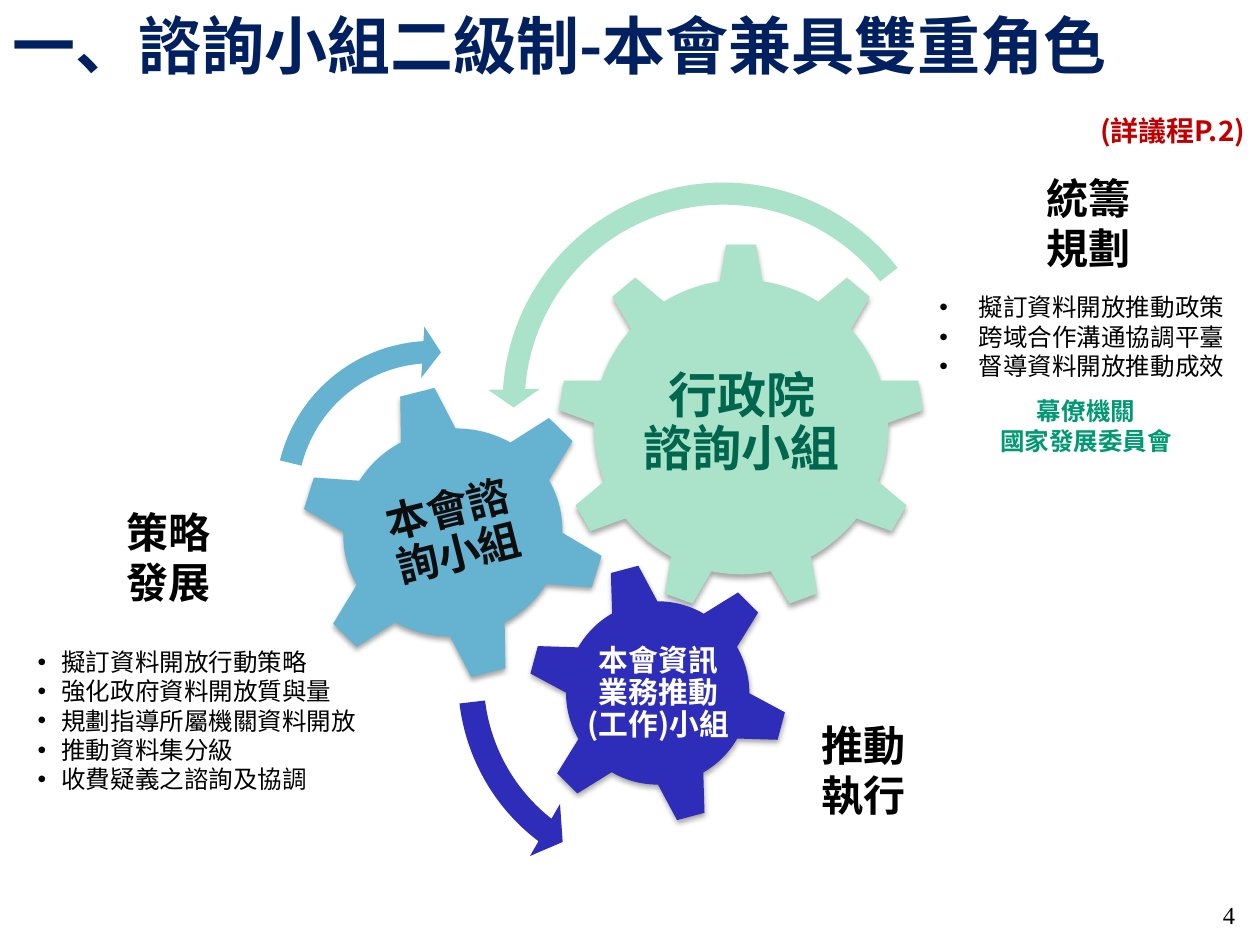
from dataclasses import dataclass
from lxml.etree import SubElement as Sub
from pptx import Presentation as Deck
from pptx.dml.color import RGBColor as Rgb
from pptx.enum.shapes import MSO_SHAPE as Geo
from pptx.enum.text import MSO_ANCHOR as Anc, PP_ALIGN as Al
from pptx.oxml.ns import qn
from pptx.util import Cm, Pt


@dataclass(frozen=True)
class Theme:
    sans: str = "Noto Sans CJK SC"
    serif: str = "Times New Roman"
    black: str = "000000"
    white: str = "FFFFFF"
    ink: str = "0D0D0D"
    navy: str = "002060"
    red: str = "C00000"
    mint: str = "AAE2CA"
    pine: str = "00664D"
    green: str = "009973"
    sky: str = "66B3D1"
    blue: str = "2D2DB9"
    title: int = 36
    large: int = 28
    head: int = 24
    small: int = 17
    note: int = 16
    body: int = 14


def write(frame, text, size, color, font, bold=False, align=Al.LEFT,
          gap=None, hang=0):
    for num, line in enumerate(text.split("\n")):
        para = frame.paragraphs[0] if num == 0 else frame.add_paragraph()
        para.alignment = align
        if gap:
            para.line_spacing = gap
        if hang:
            props = para._p.get_or_add_pPr()
            props.set("marL", str(Cm(hang)))
            props.set("indent", str(-Cm(hang)))
            Sub(props, qn("a:buFont"), typeface="Arial")
            Sub(props, qn("a:buChar"), char="•")
        para.text = line
        for run in para.runs:
            run.font.name = font
            run.font.size = Pt(size)
            run.font.bold = bold
            run.font.color.rgb = Rgb.from_string(color)
            Sub(run._r.get_or_add_rPr(), qn("a:ea"), typeface=font)


class Board:
    def __init__(self, theme, slide):
        self.theme = theme
        self.slide = slide

    def text(self, box, text, size, color, font=None, anchor=Anc.TOP,
             inset=None, turn=0, **form):
        item = self.slide.shapes.add_textbox(*map(Cm, box))
        item.rotation = turn
        frame = item.text_frame
        frame.word_wrap = True
        frame.vertical_anchor = anchor
        if inset is not None:
            frame.margin_left = frame.margin_right = Cm(inset)
            frame.margin_top = frame.margin_bottom = Cm(inset)
        write(frame, text, size, color, font or self.theme.sans, **form)

    def shape(self, kind, box, color, turn=0):
        item = self.slide.shapes.add_shape(kind, *map(Cm, box))
        item.rotation = turn
        item.fill.solid()
        item.fill.fore_color.rgb = Rgb.from_string(color)
        item.line.fill.background()
        item.shadow.inherit = False
        return item

    def gear(self, kind, box, color, turn=0):
        item = self.shape(kind, box, color, turn)
        glow = item._element.spPr.find(qn("a:effectLst"))
        shade = Sub(glow, qn("a:outerShdw"), blurRad=str(Pt(3.1)),
                    dist=str(Pt(1.8)), dir="5400000", rotWithShape="0")
        tone = Sub(shade, qn("a:srgbClr"), val=self.theme.black)
        Sub(tone, qn("a:alpha"), val="35000")

    def label(self, box, text, size, color, inset, turn=0):
        self.text(box, text, size, color, anchor=Anc.MIDDLE, inset=inset,
                  turn=turn, bold=True, align=Al.CENTER, gap=0.9)

    def arc(self, kind, box, color, turn, flip, width, angles, tip):
        item = self.shape(kind, box, color, turn)
        item._element.spPr.find(qn("a:xfrm")).set(flip, "1")
        vals = [width / 100, *(deg * 0.6 for deg in angles), tip / 100]
        for num, val in enumerate(vals):
            item.adjustments[num] = val

    def head(self, left, top, text):
        self.text((left, top, 2.57, 2.31), text, self.theme.head,
                  self.theme.black, bold=True)

    def list(self, box, text, hang):
        self.text(box, text, self.theme.body, self.theme.black,
                  anchor=Anc.BOTTOM, hang=hang)


def main():
    deck = Deck()
    deck.slide_width, deck.slide_height = Cm(25.4), Cm(19.05)
    look = Theme()
    board = Board(look, deck.slides.add_slide(deck.slide_layouts[6]))

    board.gear(Geo.GEAR_9, (11.23, 4.9, 7.42, 7.42), look.mint)
    board.label((12.73, 6.65, 4.45, 3.81), "行政院\v諮詢小組",
                look.large, look.pine, 0.1)
    board.gear(Geo.GEAR_6, (6.02, 7.75, 6.22, 5.97), look.sky, 345.8)
    board.label((7.57, 9.27, 3.15, 2.95), "本會諮詢小組",
                look.head, look.ink, 0.08, 345.8)
    board.gear(Geo.GEAR_6, (10.62, 11.33, 5.28, 5.28), look.blue, 345)
    board.label((11.79, 12.5, 2.97, 2.97), "本會資訊業務推動(工作)小組",
                look.small, look.white, 0.05)

    board.arc(Geo.CIRCULAR_ARROW, (9.83, 3.38, 9.5, 9.5), look.mint,
              46, "flipH", 4.7, (4.98, 42.17, 263.86), 5.5)
    board.arc(Geo.LEFT_CIRCULAR_ARROW, (5.26, 6.58, 6.91, 6.91), look.sky,
              81.1, "flipV", 6.5, (7.17, 174.82, 247.3), 7.5)
    board.arc(Geo.CIRCULAR_ARROW, (8.89, 9.32, 8.66, 8.79), look.blue,
              348.4, "flipV", 6, (6.57, 221.9, 175.14), 7)

    board.text((23.19, 18.01, 1.96, 0.61), "4", look.body, look.black,
               font=look.serif, align=Al.RIGHT)
    board.text((0, 0, 22.86, 2.44), "一、諮詢小組二級制-本會兼具雙重角色",
               look.title, look.navy, bold=True)

    board.head(20.85, 3.35, "統籌規劃")
    board.head(2.31, 10.08, "策略發展")
    board.head(16.31, 14.38, "推動執行")

    board.list((0.51, 12.6, 7.01, 3.53),
               "擬訂資料開放行動策略\n強化政府資料開放質與量\n"
               "規劃指導所屬機關資料開放\n推動資料集分級\n"
               "收費疑義之諮詢及協調", 0.48)
    board.list((18.69, 5.56, 6.4, 2.24),
               "擬訂資料開放推動政策\n跨域合作溝通協調平臺\n"
               "督導資料開放推動成效", 0.79)
    board.text((19.84, 7.8, 4.11, 1.5), "幕僚機關\n國家發展委員會",
               look.body, look.green, anchor=Anc.BOTTOM, bold=True,
               align=Al.CENTER)
    board.text((20.6, 2.16, 4.75, 1.17), "(詳議程P.2)", look.note,
               look.red, bold=True, align=Al.RIGHT)
    deck.save("out.pptx")


if __name__ == "__main__":
    main()
